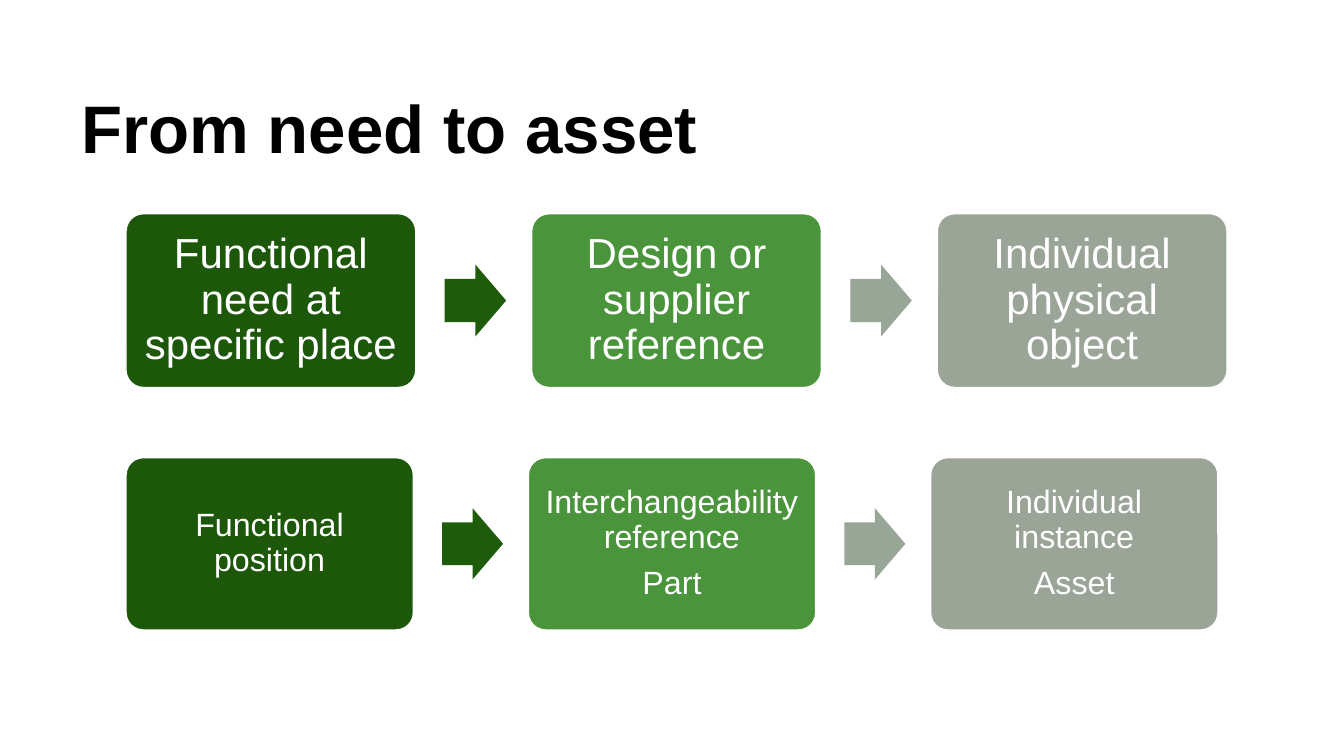
import pptx
import pptx.util
import pptx.dml.color
import pptx.enum.shapes
import pptx.enum.text
from dataclasses import dataclass

Inches, Pt = pptx.util.Inches, pptx.util.Pt
SHAPE = pptx.enum.shapes.MSO_SHAPE
ANCHOR = pptx.enum.text.MSO_ANCHOR
ALIGN = pptx.enum.text.PP_ALIGN


@dataclass(frozen=True)
class Theme:
    font: str = "Arial"
    title_size: int = 48
    need_size: int = 30
    term_size: int = 23
    title: str = "000000"
    light: str = "FFFFFF"
    steps: tuple = ("1C570A", "4A943B", "9AA598")
    arrows: tuple = ("1E5C0B", "98A697")


THEME = Theme()


def rgb(value):
    return pptx.dml.color.RGBColor.from_string(value)


def write(tf, paragraphs, size, color, align, bold=False):
    tf.word_wrap = True
    for i, text in enumerate(paragraphs):
        p = tf.paragraphs[0] if i == 0 else tf.add_paragraph()
        p.alignment = align
        p.line_spacing = 0.9
        if i:
            p.space_before = Pt(round(size * 0.35))
        r = p.add_run()
        r.text = text
        r.font.name = THEME.font
        r.font.size = Pt(size)
        r.font.bold = bold
        r.font.color.rgb = rgb(color)


def add_block(s, kind, box, fill, adjustments):
    sp = s.shapes.add_shape(kind, *(Inches(v) for v in box))
    sp.shadow.inherit = False
    sp.fill.solid()
    sp.fill.fore_color.rgb = rgb(fill)
    sp.line.fill.background()
    for i, value in enumerate(adjustments):
        sp.adjustments[i] = value
    return sp


def add_title(s, box, text):
    tf = s.shapes.add_textbox(*(Inches(v) for v in box)).text_frame
    tf.vertical_anchor = ANCHOR.BOTTOM
    write(tf, [text], THEME.title_size, THEME.title, ALIGN.LEFT, bold=True)


def add_process(s, left, top, width, steps, size, inset):
    """Row of steps, with a gap of 0.4 step widths holding each arrow."""
    step_w = width / (1.4 * len(steps) - 0.4)
    step_h = 0.6 * step_w
    arrow_w, arrow_h = 0.212 * step_w, 0.248 * step_w
    for i, paragraphs in enumerate(steps):
        x = left + 1.4 * step_w * i
        # Step
        sp = add_block(s, SHAPE.ROUNDED_RECTANGLE, (x, top, step_w, step_h),
                       THEME.steps[i], [0.1])
        sp.line.color.rgb = rgb(THEME.light)
        sp.line.width = Pt(1)
        tf = sp.text_frame
        tf.margin_left = tf.margin_right = Inches(inset)
        tf.margin_top = tf.margin_bottom = Inches(inset)
        tf.vertical_anchor = ANCHOR.MIDDLE
        write(tf, paragraphs, size, THEME.light, ALIGN.CENTER)
        # Arrow to the next step
        if i < len(steps) - 1:
            box = (x + 1.1 * step_w, top + (step_h - arrow_h) / 2, arrow_w, arrow_h)
            add_block(s, SHAPE.RIGHT_ARROW, box, THEME.arrows[i], [0.6, 0.5])


def main():
    prs = pptx.Presentation()
    prs.slide_width, prs.slide_height = Inches(13.33), Inches(7.5)
    s = prs.slides.add_slide(prs.slide_layouts[6])

    add_title(s, (0.71, 0.27, 11.91, 1.45), "From need to asset")
    # Needs in plain words
    add_process(s, 1.25, 2.12, 10.92,
                [["Functional need at specific place"],
                 ["Design or supplier reference"],
                 ["Individual physical object"]],
                THEME.need_size, 0.12)
    # Matching terms
    add_process(s, 1.25, 4.54, 10.83,
                [["Functional position"],
                 ["Interchangeability reference", "Part"],
                 ["Individual instance", "Asset"]],
                THEME.term_size, 0.1)

    prs.save("out.pptx")


if __name__ == "__main__":
    main()
